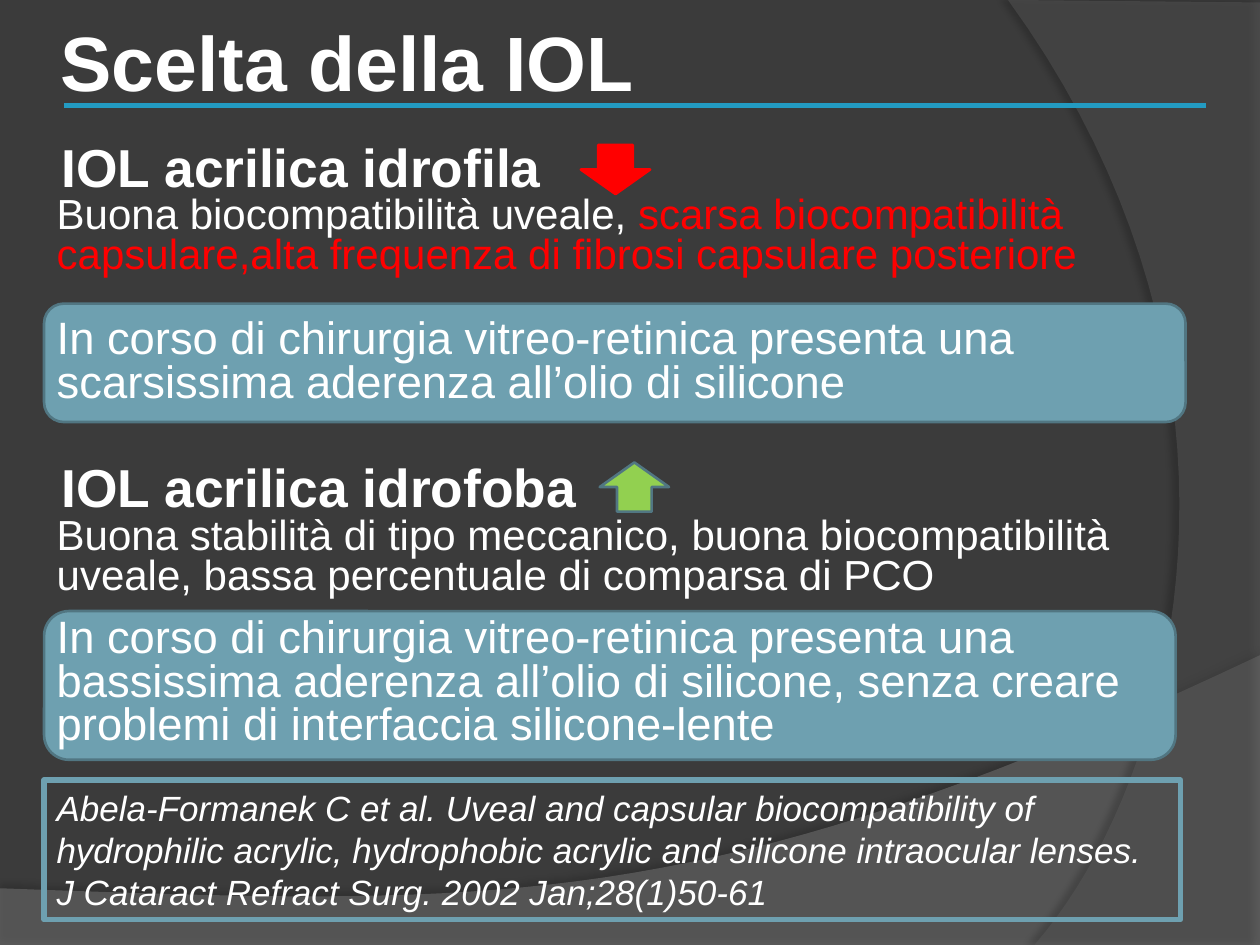
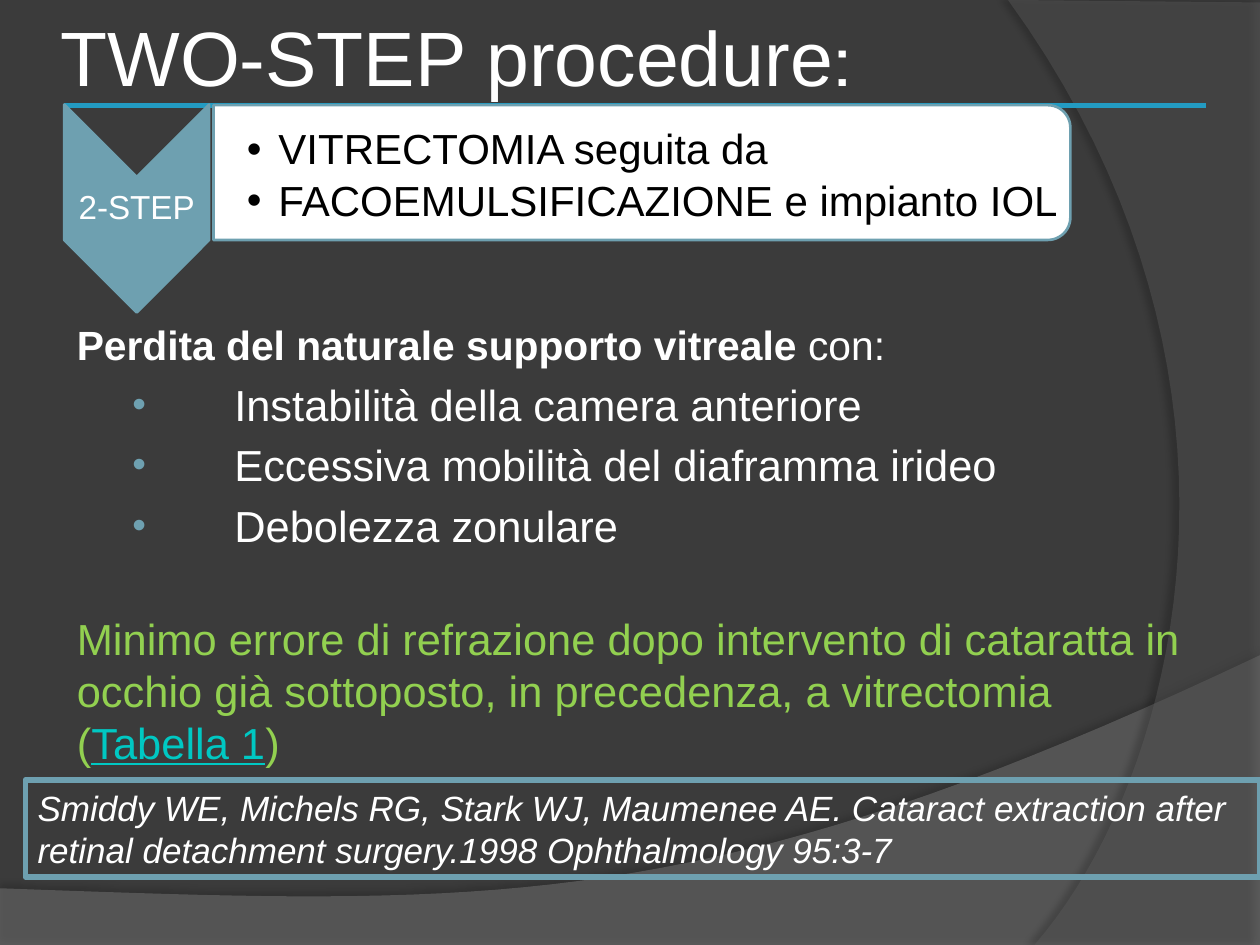
from lxml import etree
from pptx import Presentation
from pptx.dml.color import RGBColor
from pptx.enum.shapes import MSO_CONNECTOR, MSO_SHAPE
from pptx.enum.text import MSO_ANCHOR, MSO_AUTO_SIZE, PP_ALIGN
from pptx.oxml.ns import qn
from pptx.util import Inches, Pt

LEFT, CENTER = PP_ALIGN.LEFT, PP_ALIGN.CENTER
MIDDLE, TOP = MSO_ANCHOR.MIDDLE, MSO_ANCHOR.TOP
ROUNDED, RECTANGLE = MSO_SHAPE.ROUNDED_RECTANGLE, MSO_SHAPE.RECTANGLE
TWO_ROUND, CHEVRON = MSO_SHAPE.ROUND_2_SAME_RECTANGLE, MSO_SHAPE.CHEVRON
UP_ARROW = MSO_SHAPE.UP_ARROW
STRAIGHT, NO_FIT = MSO_CONNECTOR.STRAIGHT, MSO_AUTO_SIZE.NONE

DARK, WHITE, BLACK = "3B3B3B", "FFFFFF", "000000"
TEAL, TEAL_EDGE, RULE = "6EA0B0", "517682", "239BC2"
RED, GREEN, LINK = "FF0000", "92D050", "00C8C3"
FONT = "Arial"


def color(value):
    return RGBColor.from_string(value)


def child(parent, tag, **attributes):
    """Append an XML child such as a:alpha, with its attributes."""
    node = etree.SubElement(parent, qn(tag))
    for name, value in attributes.items():
        node.set(name, str(value))
    return node


def paint(shape, fill=None, line=None, width=1.5, opacity=100):
    shape.shadow.inherit = False
    if fill:
        shape.fill.solid()
        shape.fill.fore_color.rgb = color(fill)
        if opacity < 100:
            tone = shape.element.spPr.find(qn("a:solidFill"))[0]
            child(tone, "a:alpha", val=opacity * 1000)
    else:
        shape.fill.background()
    if line:
        shape.line.color.rgb = color(line)
        shape.line.width = Pt(width)
    else:
        shape.line.fill.background()


def add_shape(page, kind, box, rotation=0, **style):
    shape = page.shapes.add_shape(kind, *map(Inches, box))
    shape.rotation = rotation
    paint(shape, **style)
    return shape


def set_bullet(para, indent, hanging, char=None, tint=None):
    props = para._p.get_or_add_pPr()
    props.set("marL", str(Inches(indent)))
    props.set("indent", str(Inches(-hanging)))
    if not char:
        child(props, "a:buNone")
        return
    if tint:
        child(child(props, "a:buClr"), "a:srgbClr", val=tint)
        child(props, "a:buSzPct", val=90000)
    child(props, "a:buFont", typeface=FONT)
    child(props, "a:buChar", char=char)


def write(frame, paras, inset=(0.1, 0.05, 0.1, 0.05), anchor=TOP, **shared):
    """Fill a frame; each paragraph is (spans, settings), each span (text, font)."""
    margins = dict(zip(("margin_left", "margin_top", "margin_right", "margin_bottom"),
                       map(Inches, inset)))
    settings = dict(word_wrap=True, auto_size=NO_FIT, vertical_anchor=anchor, **margins)
    for name, value in settings.items():
        setattr(frame, name, value)
    for number, (spans, own) in enumerate(paras):
        para = frame.paragraphs[0] if number == 0 else frame.add_paragraph()
        look = {"size": 20, "before": 0, "after": 0, "spacing": 1.0, "align": LEFT,
                "bullet": (0, 0), "color": WHITE, **shared, **own}
        layout = dict(alignment=look["align"], line_spacing=look["spacing"],
                      space_before=Pt(look["before"]), space_after=Pt(look["after"]))
        for name, value in layout.items():
            setattr(para, name, value)
        set_bullet(para, *look["bullet"])
        for text, font in spans:
            span = para.add_run()
            span.text = text
            formats = {"name": FONT, "size": look["size"], "color": look["color"], **font}
            span.font.color.rgb = color(formats.pop("color"))
            formats["size"] = Pt(formats["size"])
            for name, value in formats.items():
                setattr(span.font, name, value)


def place(shape, box):
    """Move a placeholder to the box and in front of the shapes drawn so far."""
    for name, value in zip(("left", "top", "width", "height"), box):
        setattr(shape, name, Inches(value))
    shape.element.getparent().append(shape.element)
    return shape.text_frame


def curve(start, first, second, end, steps=40):
    """Points along a cubic Bezier curve, without its start."""
    points = []
    for step in range(1, steps + 1):
        t = step / steps
        weights = ((1 - t) ** 3, 3 * t * (1 - t) ** 2, 3 * t * t * (1 - t), t ** 3)
        points.append(tuple(sum(w * p[axis] for w, p in zip(weights, (start, first, second, end)))
                            for axis in (0, 1)))
    return points


def add_wave(page, points, fill, opacity, shade, distance, angle):
    corners = [(Inches(x), Inches(y)) for x, y in points]
    builder = page.shapes.build_freeform(*corners[0], scale=1.0)
    builder.add_line_segments(corners[1:], close=True)
    wave = builder.convert_to_shape()
    paint(wave, fill, opacity=opacity)
    effects = wave.element.spPr.find(qn("a:effectLst"))
    shadow = child(effects, "a:outerShdw", blurRad=Pt(4), dist=Pt(distance),
                   dir=angle * 60000, algn="ctr", rotWithShape=0)
    child(child(shadow, "a:srgbClr", val=BLACK), "a:alpha", val=shade * 1000)


def add_backdrop(page):
    floor = [(0, 7.05), (0, 7.51), (10, 7.51), (10, 5.2)]
    floor += curve((10, 5.2), (5.59, 7.29), (3.91, 7.19), (0, 7.05))
    add_wave(page, floor, "7F7F7F", 45, 35, 3.5, 270)
    side = [(10, 0.02), (10, 7.5), (8.21, 7.5)]
    side += curve((8.21, 7.5), (9.35, 6.19), (10.18, 3), (8, 0))
    add_wave(page, side, "5E5E5E", 40, 45, 4, 180)
    rule = page.shapes.add_connector(STRAIGHT, *map(Inches, (0.51, 0.84, 9.57, 0.84)))
    rule.line.color.rgb = color(RULE)
    rule.line.width = Pt(3)
    child(rule.element.spPr, "a:effectLst")


def start_page(deck):
    page = deck.slides.add_slide(deck.slide_layouts[1])
    add_backdrop(page)
    return page


def add_title(page, box, spans):
    write(place(page.shapes.title, box), [(spans, {})], inset=(0.05,) * 4,
          anchor=MIDDLE, size=44)


def add_citation(page, box, lines):
    frame = add_shape(page, RECTANGLE, box, line=TEAL, width=3).text_frame
    write(frame, [([(line, {"italic": True})], {}) for line in lines], anchor=MIDDLE)


def add_step(page, left, top, label, actions):
    """Downward chevron with its label, and a white panel listing the actions."""
    add_shape(page, TWO_ROUND, (left + 4.05, top - 2.86, 1.07, 6.8), 90,
              fill=WHITE, line=TEAL)
    panel = page.shapes.add_textbox(*map(Inches, (left + 1.26, top + 0.09, 6.75, 0.97)))
    write(panel.text_frame, [([(action, {})], {}) for action in actions],
          inset=(0.19, 0.02, 0.02, 0.02), anchor=MIDDLE, size=24, color=BLACK,
          spacing=0.9, after=3.6, bullet=(0.25, 0.25, "•"))
    add_shape(page, CHEVRON, (left - 0.25, top + 0.25, 1.65, 1.15), 90, fill=TEAL, line=TEAL)
    tag = page.shapes.add_textbox(*map(Inches, (left, top + 0.58, 1.15, 0.49)))
    write(tag.text_frame, [([(label, {})], {})], inset=(0.01,) * 4, anchor=MIDDLE,
          size=19, align=CENTER, spacing=0.9)


def build_lens_choice(deck):
    page = start_page(deck)
    for box in ((0.35, 4.85, 8.98, 1.18), (0.35, 2.41, 9.06, 0.94)):
        add_shape(page, ROUNDED, box, fill=TEAL, line=TEAL_EDGE)
    add_title(page, (0.43, 0, 9, 0.96), [("Scelta della IOL", {"bold": True})])

    heading = {"size": 30.5, "bullet": (0.46, 0.42)}
    detail, note = {"size": 24}, {"size": 25.9}
    bold = {"bold": True}
    paras = [
        ([("IOL acrilica idrofila", bold)], heading),
        ([("Buona biocompatibilità uveale, ", {}),
          ("scarsa biocompatibilità capsulare,alta frequenza di fibrosi capsulare posteriore",
           {"color": RED})], detail),
        ([("In corso di chirurgia vitreo-retinica presenta una scarsissima aderenza "
           "all’olio di silicone", {})], {**note, "before": 24}),
        ([("IOL acrilica idrofoba", bold)], {**heading, "before": 34}),
        ([("Buona stabilità di tipo meccanico, buona biocompatibilità uveale, "
           "bassa percentuale di comparsa di PCO", {})], detail),
        ([("In corso di chirurgia vitreo-retinica presenta una bassissima aderenza "
           "all’olio di silicone, senza creare problemi di interfaccia silicone-lente", {})],
         {**note, "before": 11.5}),
    ]
    write(place(page.placeholders[1], (0.35, 1.11, 9.21, 5)), paras, spacing=0.8)
    add_citation(page, (0.35, 6.19, 9.02, 1.11), [
        "Abela-Formanek C et al. Uveal and capsular biocompatibility of hydrophilic acrylic, "
        "hydrophobic acrylic and silicone intraocular lenses.",
        "J Cataract Refract Surg. 2002 Jan;28(1)50-61"])
    add_shape(page, UP_ARROW, (4.61, 1.15, 0.55, 0.39), 180, fill=RED, line=RED)
    add_shape(page, UP_ARROW, (4.76, 3.67, 0.55, 0.39), fill=GREEN, line=TEAL_EDGE)


def build_two_step(deck):
    page = start_page(deck)
    add_title(page, (0.43, -0.19, 8.17, 1.25),
              [("TWO-STEP procedure", {}), (":", {"size": 46, "name": "Cabin"})])
    risks = ("Instabilità della camera anteriore",
             "Eccessiva mobilità del diaframma irideo",
             "Debolezza zonulare")
    paras = [([("Perdita del naturale supporto vitreale", {"bold": True}), (" con:", {})],
              {"size": 23.3})]
    paras += [([(risk, {})], {"before": 5, "bullet": (1.25, 0.81, "•", TEAL)})
              for risk in risks]
    paras.append(([("Minimo errore di refrazione dopo intervento di cataratta in occhio già "
                    "sottoposto, in precedenza, a vitrectomia (", {}),
                   ("Tabella 1", {"color": LINK, "underline": True}), (")", {})],
                  {"color": GREEN, "before": 34.5}))
    write(place(page.placeholders[1], (0.51, 2.49, 9, 3.65)), paras, size=24.8)
    add_step(page, 0.51, 0.83, "2-STEP",
             ["VITRECTOMIA seguita da", "FACOEMULSIFICAZIONE e impianto IOL"])
    add_citation(page, (0.2, 6.19, 9.8, 0.77), [
        "Smiddy WE, Michels RG, Stark WJ, Maumenee AE. Cataract extraction after "
        "retinal detachment surgery.1998 Ophthalmology 95:3-7"])


def main():
    deck = Presentation()
    deck.slide_width, deck.slide_height = Inches(10), Inches(7.5)
    backdrop = deck.slide_master.background.fill
    backdrop.solid()
    backdrop.fore_color.rgb = color(DARK)
    build_lens_choice(deck)
    build_two_step(deck)
    deck.save("out.pptx")


if __name__ == "__main__":
    main()
